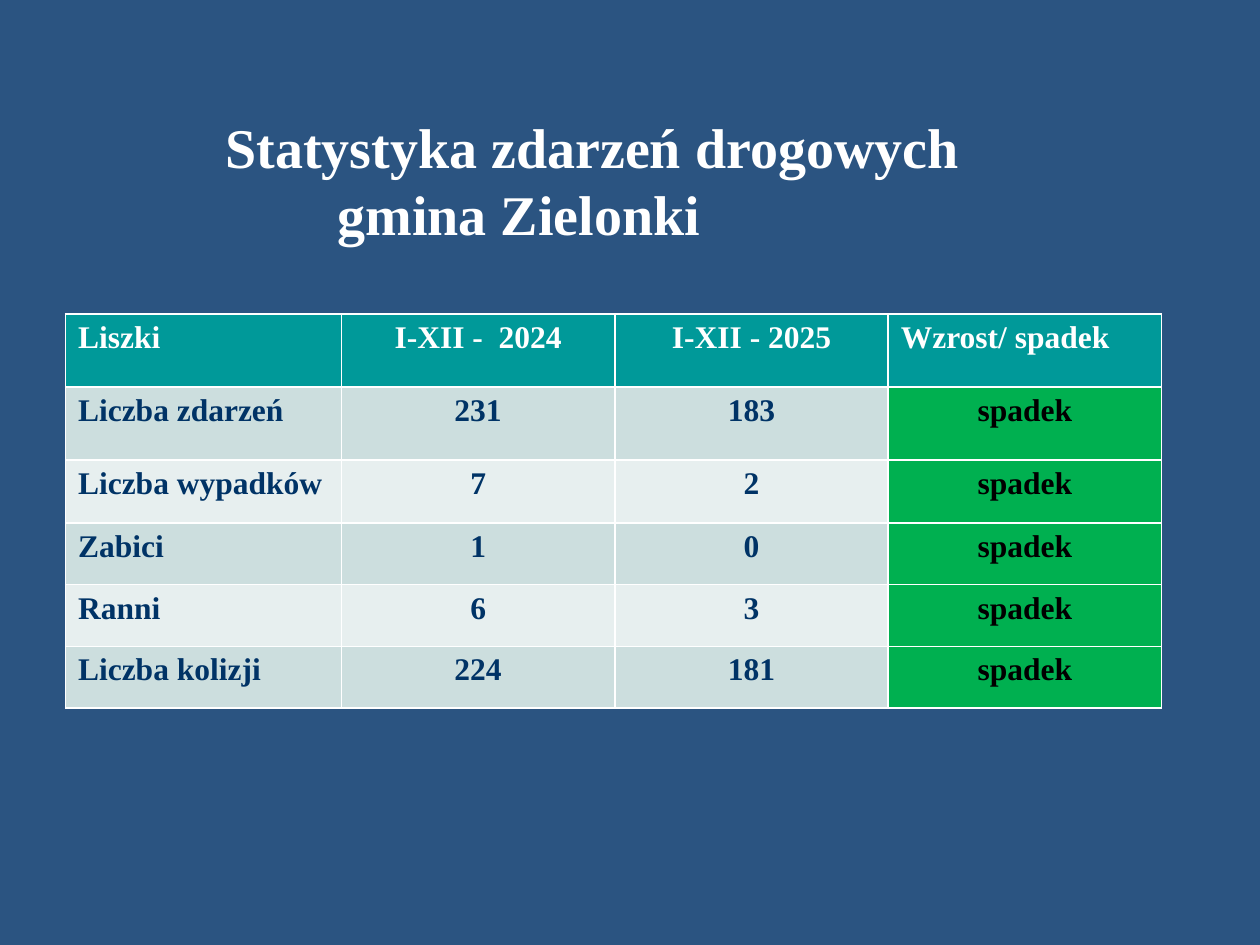
from lxml import etree
from pptx import Presentation
from pptx.dml.color import RGBColor
from pptx.enum.text import PP_ALIGN
from pptx.oxml.ns import qn
from pptx.util import Inches, Pt

LEFT, CENTER = PP_ALIGN.LEFT, PP_ALIGN.CENTER
COLORS = {
    "background": "2B5481",
    "white": "FFFFFF",
    "header": "009999",
    "navy": "003366",
    "odd_row": "CCDEDE",
    "even_row": "E7EFEF",
    "decrease": "00B050",
    "black": "000000",
}
TITLE = [("Statystyka zdarzeń drogowych", 0), ("gmina Zielonki", 0.89)]
HEADER = ["Liszki", "I-XII -  2024", "I-XII - 2025", "Wzrost/ spadek"]
STATISTICS = [
    ("Liczba zdarzeń", 231, 183),
    ("Liczba wypadków", 7, 2),
    ("Zabici", 1, 0),
    ("Ranni", 6, 3),
    ("Liczba kolizji", 224, 181),
]
COLUMN_WIDTHS = [2.19, 2.17, 2.17, 2.17]
ROW_HEIGHTS = [0.58, 0.58, 0.5, 0.49, 0.49, 0.49]


class SlideBuilder:
    font_name = "Times New Roman"

    def __init__(self, slide):
        self.slide = slide

    def color(self, name):
        return RGBColor.from_string(COLORS[name])

    def background(self, name):
        fill = self.slide.background.fill
        fill.solid()
        fill.fore_color.rgb = self.color(name)

    def set_text(self, paragraph, text, size, color, align=LEFT):
        paragraph.text = text
        paragraph.alignment = align
        font = paragraph.font
        font.name, font.size, font.bold = self.font_name, Pt(size), True
        font.color.rgb = self.color(color)

    def title(self, lines, left, top, width, height):
        box = self.slide.shapes.add_textbox(
            Inches(left), Inches(top), Inches(width), Inches(height))
        frame = box.text_frame
        frame.word_wrap = True
        for index, (text, indent) in enumerate(lines):
            paragraph = frame.add_paragraph() if index else frame.paragraphs[0]
            self.set_text(paragraph, text, 32, "white")
            if indent:
                paragraph._p.get_or_add_pPr().set("marL", str(Inches(indent)))

    def borders(self, cell):
        properties = cell._tc.get_or_add_tcPr()
        for side in ("lnL", "lnR", "lnT", "lnB"):
            line = etree.SubElement(properties, qn(f"a:{side}"), w=str(Pt(1)))
            fill = etree.SubElement(line, qn("a:solidFill"))
            etree.SubElement(fill, qn("a:srgbClr"), val=COLORS["white"])

    def cell(self, cell, text, fill, color, align):
        self.borders(cell)
        cell.fill.solid()
        cell.fill.fore_color.rgb = self.color(fill)
        self.set_text(cell.text_frame.paragraphs[0], text, 18, color, align)

    def table(self, header, statistics, left, top, widths, heights):
        table = self.slide.shapes.add_table(
            len(heights), len(widths), Inches(left), Inches(top),
            Inches(sum(widths)), Inches(sum(heights))).table
        for column, width in zip(table.columns, widths):
            column.width = Inches(width)
        for row, height in zip(table.rows, heights):
            row.height = Inches(height)
        for index, text in enumerate(header):
            align = CENTER if index in (1, 2) else LEFT
            self.cell(table.cell(0, index), text, "header", "white", align)
        for row, (label, before, after) in enumerate(statistics, 1):
            band = "odd_row" if row % 2 else "even_row"
            self.cell(table.cell(row, 0), label, band, "navy", LEFT)
            for column, value in enumerate((before, after), 1):
                self.cell(table.cell(row, column), str(value), band, "navy", CENTER)
            self.cell(table.cell(row, 3), "spadek", "decrease", "black", CENTER)


def main():
    deck = Presentation()
    deck.slide_width, deck.slide_height = Inches(10), Inches(7.5)
    builder = SlideBuilder(deck.slides.add_slide(deck.slide_layouts[6]))
    builder.background("background")
    builder.title(TITLE, 1.69, 0.84, 6.08, 1.18)
    builder.table(HEADER, STATISTICS, 0.52, 2.49, COLUMN_WIDTHS, ROW_HEIGHTS)
    deck.save("out.pptx")


if __name__ == "__main__":
    main()
